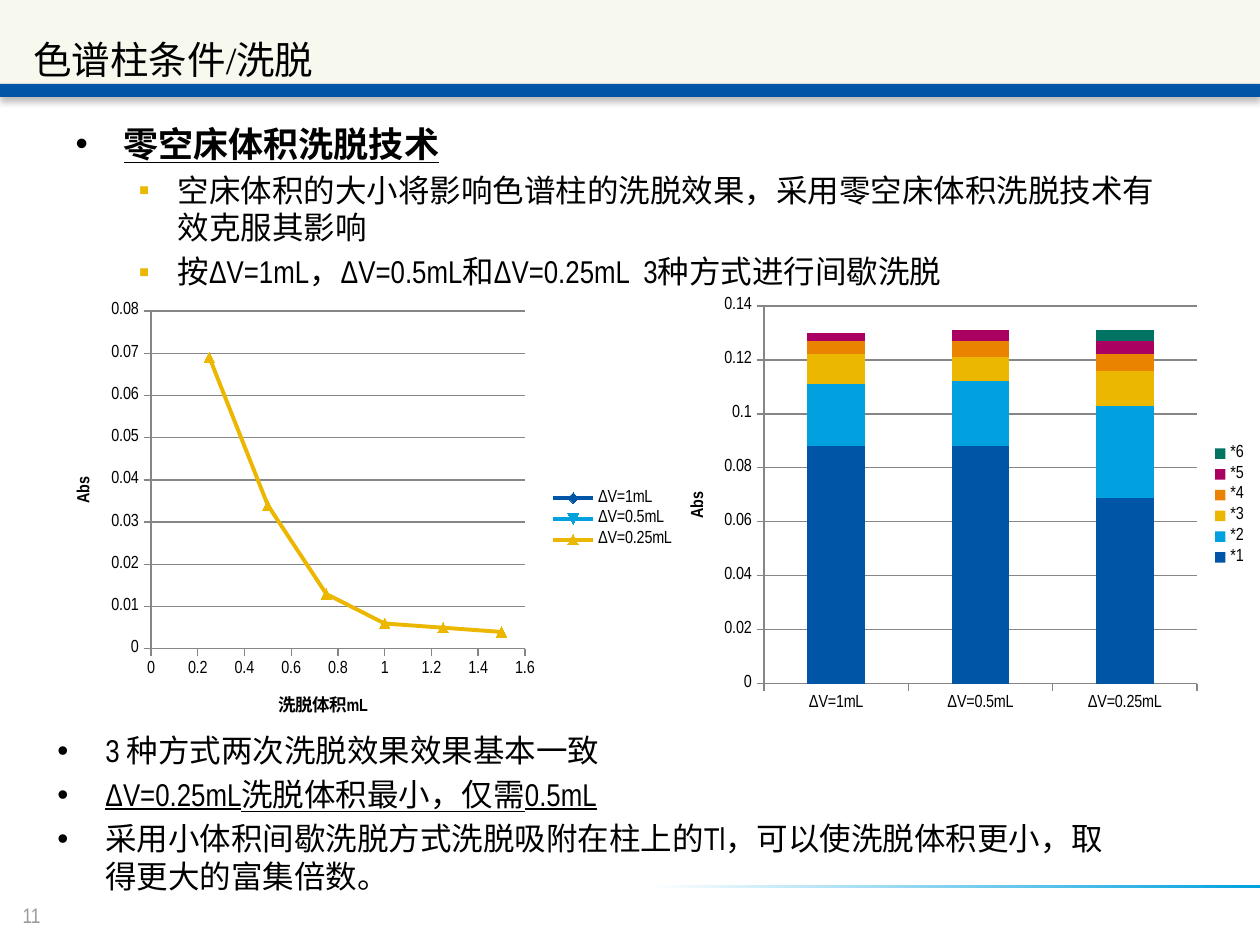
from lxml.etree import SubElement
from pptx import Presentation
from pptx.chart.data import CategoryChartData, XyChartData
from pptx.dml.color import RGBColor
from pptx.enum.chart import XL_CHART_TYPE as ChartType, XL_LEGEND_POSITION as LegendPosition, XL_TICK_MARK as TickMark
from pptx.enum.shapes import MSO_SHAPE as Shape
from pptx.enum.text import MSO_ANCHOR as Anchor, MSO_AUTO_SIZE as AutoSize, PP_ALIGN as Align
from pptx.oxml import parse_xml
from pptx.oxml.ns import nsdecls, qn
from pptx.util import Emu, Pt

BLACK = RGBColor(0x00, 0x00, 0x00)
WHITE = RGBColor(0xFF, 0xFF, 0xFF)
CREAM = RGBColor(0xF7, 0xF8, 0xEE)
PAGE_GREY = RGBColor(0x99, 0x99, 0x99)
GRID_GREY = RGBColor(0x86, 0x86, 0x86)
BLUE = RGBColor(0x00, 0x55, 0xA6)
SKY = RGBColor(0x00, 0xA1, 0xDE)
GOLD = RGBColor(0xEB, 0xB7, 0x00)
ORANGE = RGBColor(0xE9, 0x83, 0x00)
MAGENTA = RGBColor(0xA9, 0x00, 0x61)
TEAL = RGBColor(0x00, 0x73, 0x63)
PALETTE = [BLUE, SKY, GOLD, ORANGE, MAGENTA, TEAL]
SANS = "Arial Narrow"
SERIF = "Times New Roman"
EMU_PER_PX = 914400 / 126


def px(length):
    return Emu(round(length * EMU_PER_PX))


def place(shape, box):
    shape.left, shape.top, shape.width, shape.height = map(px, box)


def bring_to_front(slide, shape):
    slide.shapes._spTree.append(shape._element)


def add_run(paragraph, text, size, face=SANS, color=BLACK, bold=False, underline=False):
    run = paragraph.add_run()
    run.text = text
    font = run.font
    font.name, font.size, font.bold, font.underline = face, Pt(size), bold, underline
    font.color.rgb = color


def add_bar(slide, box):
    bar = slide.shapes.add_shape(Shape.RECTANGLE, *map(px, box))
    bar.shadow.inherit = False
    bar.line.fill.background()
    return bar


def add_solid_bar(slide, box, color):
    bar = add_bar(slide, box)
    bar.fill.solid()
    bar.fill.fore_color.rgb = color
    return bar


def add_header(slide, box, title_text):
    left, top, width, height = box
    add_solid_bar(slide, (left, top, width, height - 6), CREAM)
    rule = add_solid_bar(slide, (left, top + height - 13, width, 13), BLUE)
    effects = rule._element.spPr.find(qn("a:effectLst"))
    effects.append(parse_xml(
        f'<a:outerShdw {nsdecls("a")} blurRad="50800" dist="25400" dir="5400000" rotWithShape="0">'
        '<a:srgbClr val="000000"><a:alpha val="27000"/></a:srgbClr></a:outerShdw>'))
    title = slide.shapes.title
    bring_to_front(slide, title)
    place(title, (left + 21, top + 5, 1176, 84))
    frame = title.text_frame
    frame.auto_size = AutoSize.NONE
    frame.vertical_anchor = Anchor.BOTTOM
    paragraph = frame.paragraphs[0]
    paragraph.alignment = Align.LEFT
    paragraph.line_spacing = Pt(21)
    add_run(paragraph, title_text, 22, SERIF)


def add_footer(slide, box, page):
    left, top, width, height = box
    accent = add_bar(slide, (left + 648, top, width - 648, 3))
    accent.fill.gradient()
    accent.fill.gradient_angle = 0
    for stop, color, position in zip(accent.fill.gradient_stops, (WHITE, SKY), (0, 1)):
        stop.color.rgb = color
        stop.position = position
    number = slide.shapes.add_textbox(*map(px, (left, top + 11, 63, height - 11)))
    number.text_frame.word_wrap = True
    paragraph = number.text_frame.paragraphs[0]
    paragraph.alignment = Align.CENTER
    add_run(paragraph, page, 12, color=PAGE_GREY)


def set_bullet(paragraph, mark, margin, hanging, color):
    properties = paragraph._p.get_or_add_pPr()
    properties.set("marL", str(px(margin)))
    properties.set("indent", str(-px(hanging)))
    bullet_color = SubElement(properties, qn("a:buClr"))
    SubElement(bullet_color, qn("a:srgbClr"), val=str(color))
    SubElement(properties, qn("a:buFont"), typeface="Arial")
    SubElement(properties, qn("a:buChar"), char=mark)


def fill_list(frame, items):
    frame.word_wrap = True
    frame.auto_size = AutoSize.NONE
    for index, (level, text, size, emphasis) in enumerate(items):
        paragraph = frame.add_paragraph() if index else frame.paragraphs[0]
        paragraph.level = level
        paragraph.alignment = Align.LEFT
        if level:
            set_bullet(paragraph, "▪", 102, 39, GOLD)
        else:
            set_bullet(paragraph, "•", 48, 48, BLACK)
        paragraph.space_before = Pt(size / 5 if index else 0)
        add_run(paragraph, text, size, **emphasis)


def add_method(slide, box):
    body = slide.placeholders[1]
    place(body, box)
    fill_list(body.text_frame, [
        (0, "零空床体积洗脱技术", 20, {"bold": True, "underline": True}),
        (1, "空床体积的大小将影响色谱柱的洗脱效果，采用零空床体积洗脱技术有效克服其影响", 18, {}),
        (1, "按ΔV=1mL，ΔV=0.5mL和ΔV=0.25mL  3种方式进行间歇洗脱", 18, {}),
    ])


def add_findings(slide, box):
    findings = slide.shapes.add_textbox(*map(px, box))
    fill_list(findings.text_frame, [
        (0, "3 种方式两次洗脱效果效果基本一致", 18, {}),
        (0, "ΔV=0.25mL洗脱体积最小，仅需0.5mL", 18, {"underline": True}),
        (0, "采用小体积间歇洗脱方式洗脱吸附在柱上的Tl，可以使洗脱体积更小，取得更大的富集倍数。", 18, {}),
    ])


def format_axis(axis, title=None, maximum=None, step=None, grid=False):
    axis.has_major_gridlines = grid
    axis.major_tick_mark = TickMark.OUTSIDE
    axis.minor_tick_mark = TickMark.NONE
    axis.format.line.color.rgb = GRID_GREY
    if grid:
        axis.major_gridlines.format.line.color.rgb = GRID_GREY
    if maximum:
        axis.minimum_scale, axis.maximum_scale, axis.major_unit = 0, maximum, step
        axis.tick_labels.number_format = "General"
        axis.tick_labels.number_format_is_linked = False
    if title:
        add_run(axis.axis_title.text_frame.paragraphs[0], title, 10, bold=True)


def add_chart(slide, box, plot_box, kind, data):
    left, top, width, height = box
    chart = slide.shapes.add_chart(kind, *map(px, box), data).chart
    chart.has_title = False
    chart.font.name, chart.font.size = SANS, Pt(10)
    chart.font.color.rgb = BLACK
    chart.has_legend = True
    chart.legend.position = LegendPosition.RIGHT
    chart.legend.include_in_layout = False
    chart.plots[0].vary_by_categories = False
    plot_area = chart._chartSpace.chart.plotArea
    for stale in plot_area.findall(qn("c:layout")):
        plot_area.remove(stale)
    layout = parse_xml(f'<c:layout {nsdecls("c")}><c:manualLayout/></c:layout>')
    plot_area.insert(0, layout)
    settings = {"layoutTarget": "inner", "xMode": "edge", "yMode": "edge"}
    fractions = [part / whole for part, whole in zip(plot_box, (width, height) * 2)]
    settings.update(zip("xywh", (f"{fraction:.4f}" for fraction in fractions)))
    for tag, value in settings.items():
        SubElement(layout[0], qn(f"c:{tag}"), val=value)
    return chart


def add_elution_curve(slide, box):
    data = XyChartData()
    for name, step, absorbances in [
        ("ΔV=1mL", 1, [0.088, 0.023, 0.011, 0.005, 0.003]),
        ("ΔV=0.5mL", 0.5, [0.088, 0.024, 0.009, 0.006, 0.004]),
        ("ΔV=0.25mL", 0.25, [0.069, 0.034, 0.013, 0.006, 0.005, 0.004]),
    ]:
        series = data.add_series(name)
        for count, absorbance in enumerate(absorbances, 1):
            series.add_data_point(count * step, absorbance)
    chart = add_chart(slide, box, (103, 17, 374, 338), ChartType.XY_SCATTER_LINES, data)
    format_axis(chart.category_axis, "洗脱体积mL", 1.6, 0.2)
    format_axis(chart.value_axis, "Abs", 0.08, 0.01, grid=True)
    for series, color in zip(chart.plots[0].series, PALETTE):
        series.smooth = False
        series.format.line.color.rgb = color
        series.format.line.width = Pt(2.25)
        series.marker.size = 6
        series.marker.format.fill.solid()
        series.marker.format.fill.fore_color.rgb = color
        series.marker.format.line.color.rgb = color


def add_elution_totals(slide, box):
    data = CategoryChartData()
    data.categories = ["ΔV=1mL", "ΔV=0.5mL", "ΔV=0.25mL"]
    for number, absorbances in enumerate([
        (0.088, 0.088, 0.069), (0.023, 0.024, 0.034), (0.011, 0.009, 0.013),
        (0.005, 0.006, 0.006), (0.003, 0.004, 0.005), (None, None, 0.004),
    ], 1):
        data.add_series(f"*{number}", absorbances)
    chart = add_chart(slide, box, (102, 16, 433, 378), ChartType.COLUMN_STACKED, data)
    format_axis(chart.category_axis)
    format_axis(chart.value_axis, "Abs", 0.14, 0.02, grid=True)
    chart.plots[0].gap_width = 150
    chart.plots[0].overlap = 100
    for series, color in zip(chart.plots[0].series, PALETTE):
        series.format.fill.solid()
        series.format.fill.fore_color.rgb = color


def main():
    deck = Presentation()
    deck.slide_width, deck.slide_height = px(1260), px(945)
    slide = deck.slides.add_slide(deck.slide_layouts[1])
    add_header(slide, (0, 0, 1260, 97), "色谱柱条件/洗脱")
    add_footer(slide, (0, 885, 1260, 49), "11")
    add_method(slide, (63, 116, 1134, 624))
    add_elution_curve(slide, (48, 294, 640, 450))
    add_elution_totals(slide, (662, 290, 598, 431))
    add_findings(slide, (45, 725, 1079, 220))
    deck.save("out.pptx")


if __name__ == "__main__":
    main()
